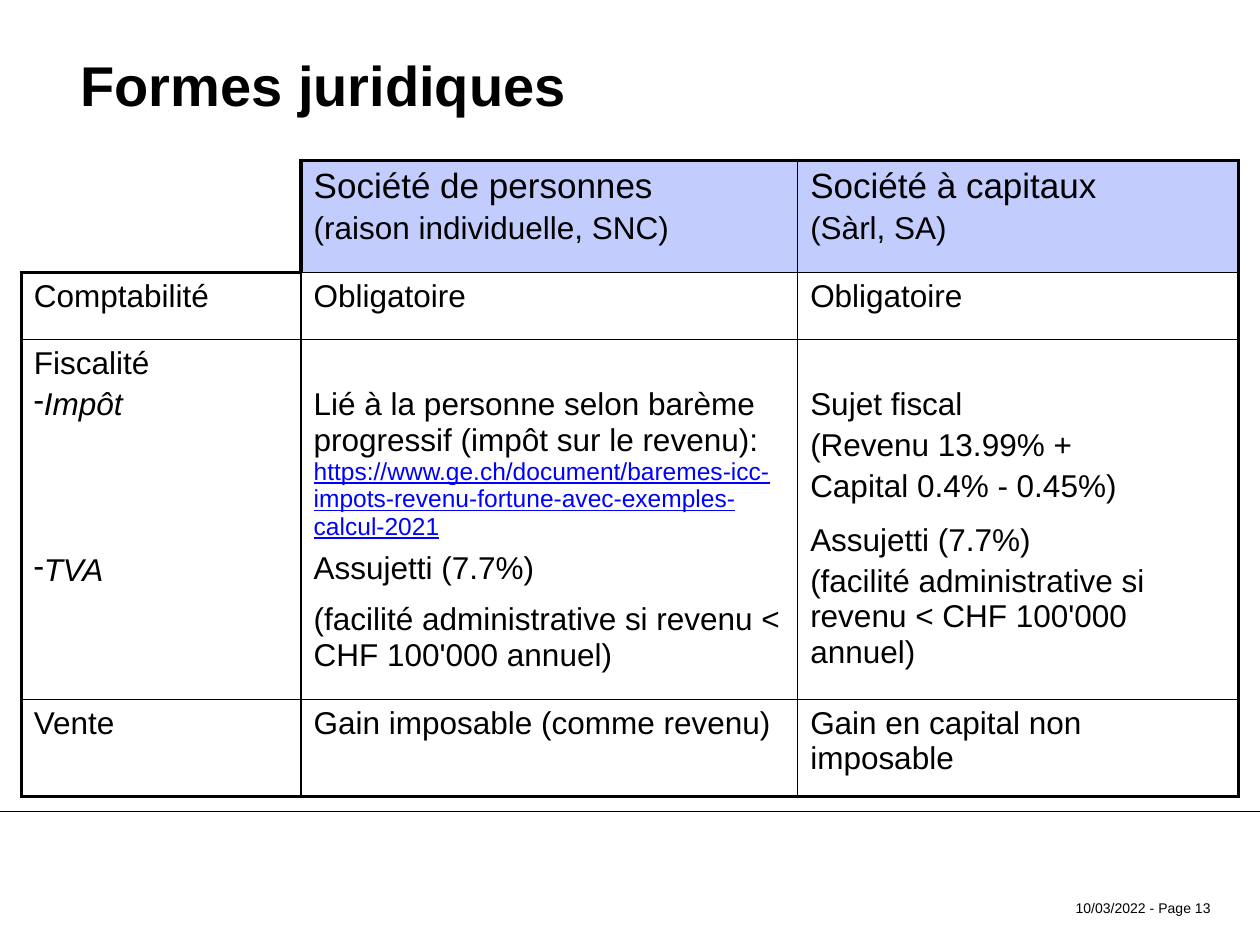
from lxml.etree import SubElement
from pptx import Presentation
from pptx.dml.color import RGBColor
from pptx.enum.shapes import MSO_CONNECTOR
from pptx.enum.text import MSO_ANCHOR as Anchor, PP_ALIGN as Align
from pptx.oxml.ns import qn
from pptx.util import Cm, Pt

FONT, BLACK, BLUE, HEADER_FILL = "Arial", "000000", "0000FF", "C2CDFE"
THICK, THIN = 2.25, 1
PARAGRAPH_GAP = 3.2
COLUMNS = [5.64, 10.01, 8.89]
ROWS = [2.26, 1.35, 7.26, 1.96]
ALLOWANCE = "(facilité administrative si revenu < CHF 100'000 annuel)"
SCALE_LINK = ("https://www.ge.ch/document/"
              "baremes-icc-impots-revenu-fortune-avec-exemples-calcul-2021")

# Each paragraph is its text and the format that differs from the default
CELLS = [
    [[],
     [("Société de personnes", {"size": 20}), ("(raison individuelle, SNC)", {})],
     [("Société à capitaux", {"size": 20}), ("(Sàrl, SA)", {})]],
    [[("Comptabilité", {})], [("Obligatoire", {})], [("Obligatoire", {})]],
    [[("Fiscalité", {}),
      ("Impôt", {"italic": True, "bullet": "-"}),
      ("TVA", {"italic": True, "bullet": "-", "before": 74.7})],
     [("Lié à la personne selon barème progressif (impôt sur le revenu):", {}),
      (SCALE_LINK, {"size": 14, "color": BLUE, "underline": True,
                    "before": 0, "after": 6}),
      ("Assujetti (7.7%)", {"before": 0, "after": 6}),
      (ALLOWANCE, {})],
     [("Sujet fiscal", {}), ("(Revenu 13.99% +", {}),
      ("Capital 0.4% - 0.45%)", {}),
      ("Assujetti (7.7%)", {"before": 10.7}), (ALLOWANCE, {})]],
    [[("Vente", {})], [("Gain imposable (comme revenu)", {})],
     [("Gain en capital non imposable", {})]],
]
# Taxation details start one line below their row label
TOP_MARGINS = {(2, 1): 0.97, (2, 2): 0.97}


def rgb(color):
    return RGBColor.from_string(color)


def add_bullet(paragraph, character):
    properties = paragraph._p.get_or_add_pPr()
    properties.set("marL", "0")
    properties.set("indent", "0")
    SubElement(properties, qn("a:buSzPct"), val="95000")
    SubElement(properties, qn("a:buChar"), char=character)


def write(paragraph, text, size=18, color=BLACK, bold=False, italic=False,
          underline=False, align=Align.LEFT, before=0, after=0, bullet=None):
    if bullet:
        add_bullet(paragraph, bullet)
    paragraph.alignment = align
    paragraph.space_before, paragraph.space_after = Pt(before), Pt(after)
    run = paragraph.add_run()
    run.text = text
    font = run.font
    font.name, font.size, font.color.rgb = FONT, Pt(size), rgb(color)
    font.bold, font.italic, font.underline = bold, italic, underline


def set_border(cell, side, width):
    line = SubElement(cell._tc.get_or_add_tcPr(), qn(f"a:ln{side}"),
                      w=str(Pt(width or 0)))
    if width:
        fill = SubElement(line, qn("a:solidFill"))
        SubElement(fill, qn("a:srgbClr"), val=BLACK)
    else:
        SubElement(line, qn("a:noFill"))


def is_filled(row, column):
    return (0 <= row < len(ROWS) and 0 <= column < len(COLUMNS)
            and bool(CELLS[row][column]))


def border_width(row, column, row_step, column_step):
    """Thick around the outline of the filled cells, thin inside it."""
    sides = is_filled(row, column) + is_filled(row + row_step, column + column_step)
    return [None, THICK, THIN][sides]


def add_title(slide, left, top, width, height):
    title = slide.shapes.title
    title.left, title.top = Cm(left), Cm(top)
    title.width, title.height = Cm(width), Cm(height)
    title.text_frame.vertical_anchor = Anchor.MIDDLE
    write(title.text_frame.paragraphs[0], "Formes juridiques", size=32, bold=True)


def fill_cell(cell, row, column):
    # Borders come before the fill in the cell properties
    for side, row_step, column_step in [("L", 0, -1), ("R", 0, 1),
                                        ("T", -1, 0), ("B", 1, 0)]:
        set_border(cell, side, border_width(row, column, row_step, column_step))
    if row == 0 and column > 0:
        cell.fill.solid()
        cell.fill.fore_color.rgb = rgb(HEADER_FILL)
    else:
        cell.fill.background()
    cell.margin_top = Cm(TOP_MARGINS.get((row, column), 0.13))
    frame = cell.text_frame
    for index, (text, style) in enumerate(CELLS[row][column]):
        paragraph = frame.add_paragraph() if index else frame.paragraphs[0]
        gap = PARAGRAPH_GAP if index else 0
        write(paragraph, text, **{"before": gap, **style})


def add_comparison_table(slide, left, top):
    table = slide.shapes.add_table(
        len(ROWS), len(COLUMNS), Cm(left), Cm(top),
        Cm(sum(COLUMNS)), Cm(sum(ROWS))).table
    table.first_row = table.horz_banding = False
    for column, width in zip(table.columns, COLUMNS):
        column.width = Cm(width)
    for row, height in zip(table.rows, ROWS):
        row.height = Cm(height)
    for row in range(len(ROWS)):
        for column in range(len(COLUMNS)):
            fill_cell(table.cell(row, column), row, column)


def add_footer(slide, left, top, width, height):
    # Rule across the slide
    rule = slide.shapes.add_connector(
        MSO_CONNECTOR.STRAIGHT, Cm(left), Cm(top), Cm(left + width), Cm(top))
    rule.line.color.rgb, rule.line.width = rgb(BLACK), Pt(0.75)
    SubElement(rule._element.spPr, qn("a:effectLst"))
    # Date and page number at the lower right
    box_width, box_height = 3.48, 0.58
    box = slide.shapes.add_textbox(
        Cm(left + width - box_width - 0.74), Cm(top + height - box_height),
        Cm(box_width), Cm(box_height))
    box.text_frame.word_wrap = True
    write(box.text_frame.paragraphs[0], "10/03/2022 - Page 13",
          size=8, align=Align.RIGHT)


def main():
    presentation = Presentation()
    presentation.slide_width, presentation.slide_height = Cm(25.4), Cm(19.05)
    slide = presentation.slides.add_slide(presentation.slide_layouts[5])
    add_footer(slide, 0, 16.36, 25.4, 2.23)
    add_title(slide, 1.37, 0.1, 22.86, 3.18)
    add_comparison_table(slide, 0.43, 3.23)
    presentation.save("out.pptx")


if __name__ == "__main__":
    main()
